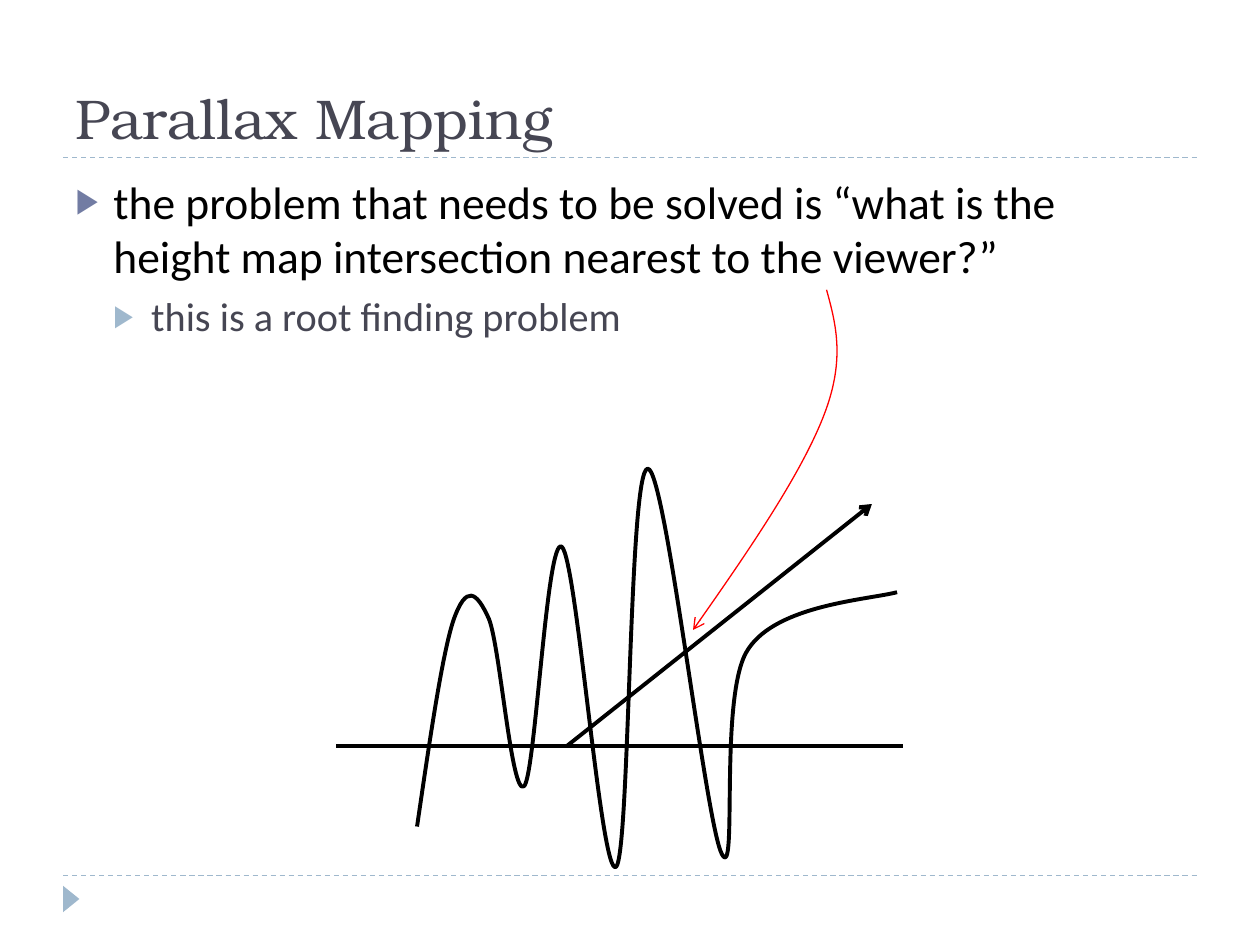
from dataclasses import dataclass

from lxml.etree import SubElement
from pptx import Presentation
from pptx.dml.color import RGBColor as Rgb
from pptx.enum.dml import MSO_LINE_DASH_STYLE as Dash
from pptx.enum.shapes import MSO_CONNECTOR_TYPE as Link, MSO_SHAPE as Preset
from pptx.enum.text import MSO_ANCHOR as Anchor, MSO_AUTO_SIZE as Fit, PP_ALIGN as Align
from pptx.oxml.ns import qn
from pptx.util import Inches, Pt


@dataclass(frozen=True)
class Theme:
    heading: str = "TeX Gyre Bonum"
    text: str = "Calibri"
    dark: str = "464653"
    black: str = "000000"
    violet: str = "727CA3"
    sky: str = "9FB8CD"
    red: str = "FF0000"
    title_size: int = 32
    body_size: int = 26
    sub_size: int = 23
    thin: float = 0.75
    thick: float = 2.25


theme = Theme()


def style_line(stroke, color, width, arrow_end=None):
    """Colour a line, drop its shadow and, if asked, put an arrow on one end."""
    stroke.line.color.rgb = Rgb.from_string(color)
    stroke.line.width = Pt(width)
    properties = stroke._element.spPr
    if properties.find(qn("a:effectLst")) is None:
        SubElement(properties, qn("a:effectLst"))
    if arrow_end:
        SubElement(stroke.line._get_or_add_ln(), qn(f"a:{arrow_end}"), type="arrow")


def draw_curve(shapes, points):
    """Draw a start point followed by cubic triples as one open curve."""
    start, *rest = [(Inches(x), Inches(y)) for x, y in points]
    builder = shapes.build_freeform(*start)
    builder.add_line_segments(rest, close=False)
    curve = builder.convert_to_shape()
    outline = curve._element.find(f".//{qn('a:path')}")
    segments = outline.findall(qn("a:lnTo"))
    for first in range(0, len(segments), 3):
        cubic = SubElement(outline, qn("a:cubicBezTo"))
        for segment in segments[first:first + 3]:
            cubic.append(segment[0])
            outline.remove(segment)
    curve.fill.background()
    curve.shadow.inherit = False
    return curve


deck = Presentation()
deck.slide_width, deck.slide_height = Inches(10), Inches(7.5)
slide = deck.slides.add_slide(deck.slide_layouts[1])
margin = deck.slide_width // 20
content_width = deck.slide_width - 2 * margin
title_rule, footer_rule = 1.25, 6.95

# Dashed rules and footer marker
for y in (footer_rule, title_rule):
    rule = slide.shapes.add_connector(
        Link.STRAIGHT, margin, Inches(y), margin + content_width, Inches(y))
    style_line(rule, theme.sky, theme.thin)
    rule.line.dash_style = Dash.DASH

marker = slide.shapes.add_shape(
    Preset.ISOSCELES_TRIANGLE, Inches(0.46), Inches(7.07), Inches(0.21), Inches(0.13))
marker.rotation = 90
marker.fill.solid()
marker.fill.fore_color.rgb = Rgb.from_string(theme.sky)
marker.line.fill.background()
marker.shadow.inherit = False

# Title
title, body = slide.shapes.title, slide.placeholders[1]
for holder, top, height in ((title, 0.17, 1.08), (body, 1.33, 5.4)):
    holder.left, holder.top = margin, Inches(top)
    holder.width, holder.height = content_width, Inches(height)
    holder.text_frame.auto_size = Fit.NONE
title.text_frame.vertical_anchor = Anchor.BOTTOM
title.text_frame.text = "Parallax Mapping"
heading = title.text_frame.paragraphs[0]
heading.alignment = Align.LEFT
heading.font.name = theme.heading
heading.font.size = Pt(theme.title_size)
heading.font.color.rgb = Rgb.from_string(theme.dark)

# Bulleted list: text, size, text colour, bullet colour, space before
points = [
    ("the problem that needs to be solved is “what is the height map "
     "intersection nearest to the viewer?”",
     theme.body_size, theme.black, theme.violet, 6),
    ("this is a root finding problem", theme.sub_size, theme.dark, theme.sky, 5),
]
body.text_frame.text = "\n".join(point[0] for point in points)
for level, (item, point) in enumerate(zip(body.text_frame.paragraphs, points)):
    _, size, color, bullet_color, gap = point
    item.level = level
    item.space_before = Pt(gap)
    layout = item._p.get_or_add_pPr()
    layout.set("marL", str(Inches(0.3 * (level + 1))))
    layout.set("indent", str(Inches(-0.3)))
    SubElement(SubElement(layout, qn("a:buClr")), qn("a:srgbClr"), val=bullet_color)
    SubElement(layout, qn("a:buSzPct"), val="76000")
    SubElement(layout, qn("a:buFont"), typeface=theme.text)
    SubElement(layout, qn("a:buChar"), char="▶")
    item.font.name = theme.text
    item.font.size = Pt(size)
    item.font.color.rgb = Rgb.from_string(color)

# Diagram: base line, height map and view ray
diagram = slide.shapes.add_group_shape().shapes
base_y = 5.92
base = diagram.add_connector(
    Link.STRAIGHT, Inches(2.67), Inches(base_y), Inches(7.17), Inches(base_y))
style_line(base, theme.black, theme.thick)

height_map = draw_curve(diagram, [
    (3.31, 6.56),
    (3.41, 5.88), (3.51, 5.19), (3.6, 4.92),
    (3.7, 4.64), (3.78, 4.69), (3.88, 4.91),
    (3.97, 5.13), (4.06, 6.33), (4.16, 6.24),
    (4.25, 6.15), (4.34, 4.24), (4.46, 4.34),
    (4.58, 4.45), (4.77, 6.98), (4.89, 6.88),
    (5, 6.77), (4.99, 3.73), (5.14, 3.72),
    (5.28, 3.7), (5.6, 6.54), (5.73, 6.78),
    (5.86, 7.02), (5.7, 5.49), (5.94, 5.15),
    (6.17, 4.8), (6.89, 4.76), (7.12, 4.7),
])
style_line(height_map, theme.black, theme.thick)

ray = diagram.add_connector(
    Link.STRAIGHT, Inches(4.5), Inches(base_y), Inches(6.92), Inches(4))
style_line(ray, theme.black, theme.thick, "tailEnd")

# Pointer from the question to the nearest intersection
pointer = draw_curve(slide.shapes, [
    (5.5, 5),
    (5.93, 4.39), (6.35, 3.77), (6.53, 3.32),
    (6.71, 2.87), (6.64, 2.59), (6.56, 2.3),
])
style_line(pointer, theme.red, theme.thin, "headEnd")

deck.save("out.pptx")
